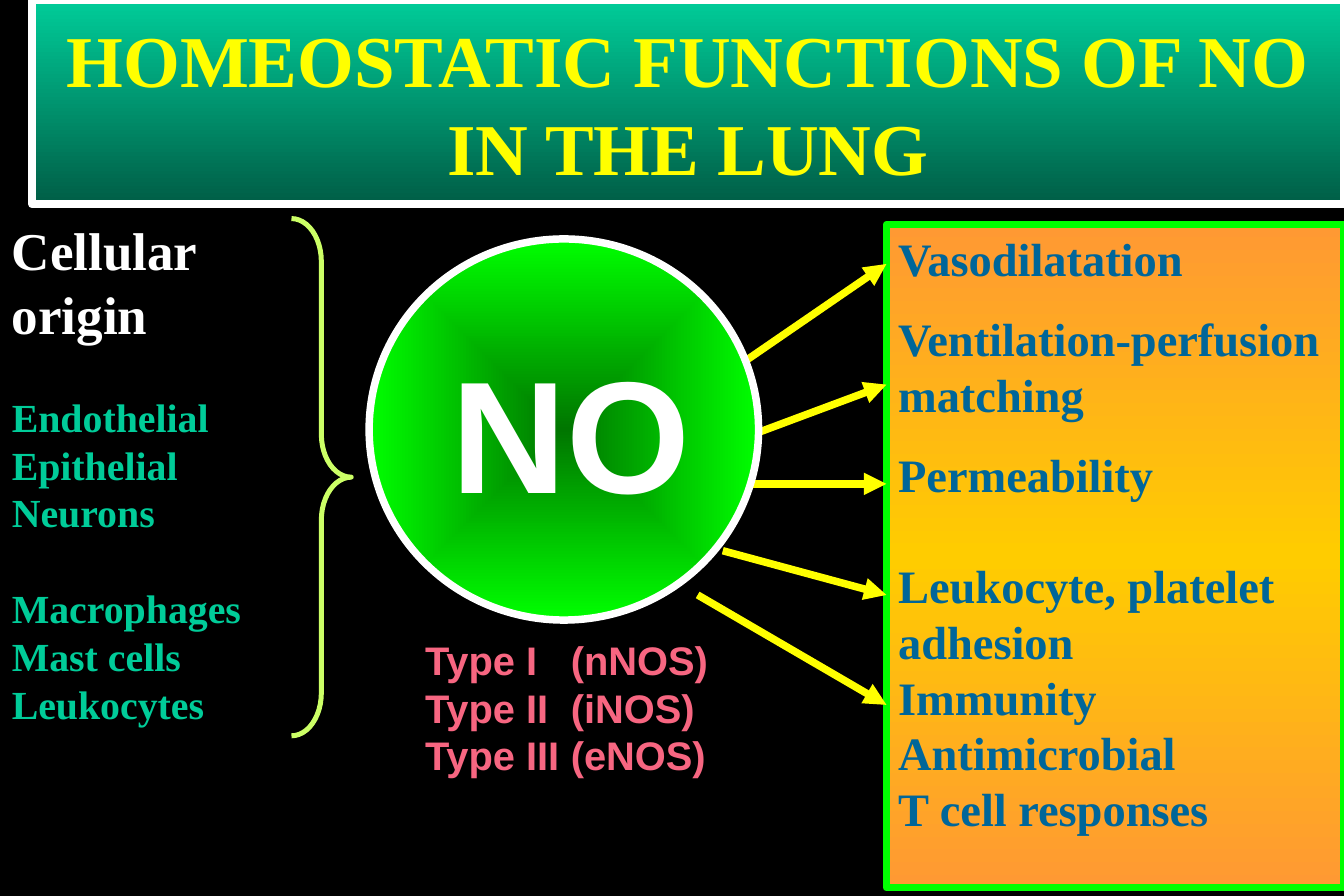
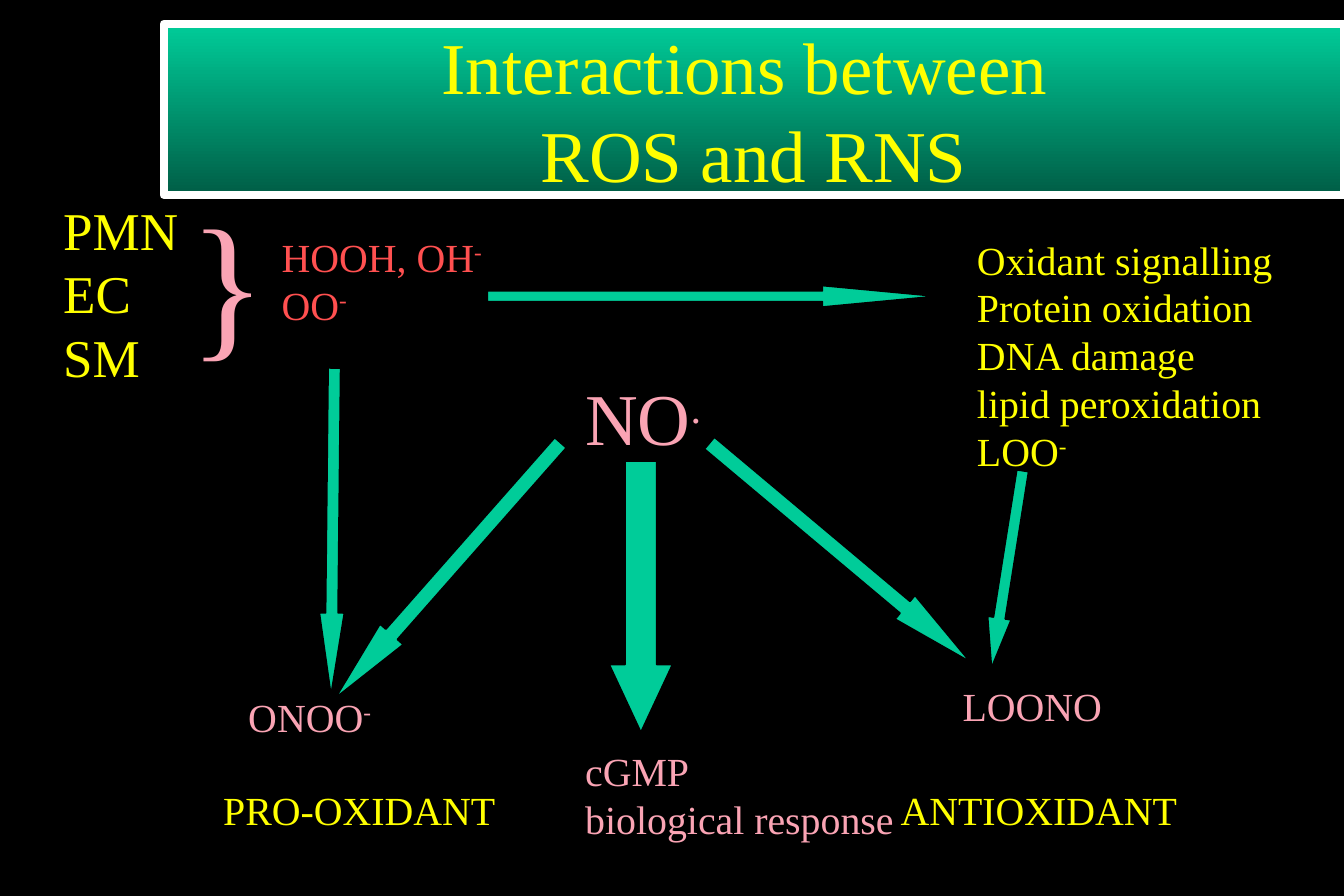
from lxml.etree import SubElement
from pptx import Presentation
from pptx.dml.color import RGBColor
from pptx.enum.shapes import MSO_CONNECTOR, MSO_SHAPE
from pptx.enum.text import MSO_ANCHOR, MSO_AUTO_SIZE, PP_ALIGN
from pptx.oxml.ns import qn
from pptx.util import Inches, Pt

BLACK = RGBColor(0x00, 0x00, 0x00)
WHITE = RGBColor(0xFF, 0xFF, 0xFF)
YELLOW = RGBColor(0xFF, 0xFF, 0x00)
TEAL = RGBColor(0x00, 0xCC, 0x99)
DARK_TEAL = RGBColor(0x00, 0x5E, 0x46)
GREEN = RGBColor(0x00, 0xFF, 0x00)
DARK_GREEN = RGBColor(0x00, 0x76, 0x00)
LIME = RGBColor(0xCC, 0xFF, 0x66)
ORANGE = RGBColor(0xFF, 0x99, 0x33)
AMBER = RGBColor(0xFF, 0xCC, 0x00)
BLUE = RGBColor(0x00, 0x66, 0x99)
ROSE = RGBColor(0xF7, 0x66, 0x81)
PINK = RGBColor(0xFA, 0xA4, 0xB4)
RED = RGBColor(0xFF, 0x50, 0x50)
SERIF, SANS = "Times New Roman", "Arial"
LINE_HEIGHT = 1.2

# Slide 1 content: (text, size of the gap above in points of type)
ORIGIN_HEADING = "Cellular origin"
CELLS = [("Endothelial", 24), ("Epithelial", 0), ("Neurons", 0),
         ("Macrophages", 24), ("Mast cells", 0), ("Leukocytes", 0)]
EFFECTS = [("Vasodilatation", 0), ("Ventilation-perfusion", 12),
           ("matching", 0), ("Permeability", 12),
           ("Leukocyte, platelet", 28), ("adhesion", 0), ("Immunity", 0),
           ("Antimicrobial", 0), ("T cell responses", 0)]
SYNTHASES = ["Type I\t(nNOS)", "Type II\t(iNOS)", "Type III\t(eNOS)"]
EFFECTS_LEFT = 7.42
# Start x, start y, end y; all end at the effects panel
EFFECT_ARROWS = [(5.95, 3.22, 2.21), (6.16, 3.69, 3.22), (6.16, 4.05, 4.05),
                 (6.05, 4.61, 4.98), (5.84, 4.98, 5.9)]

# Slide 2 content: lines, left, top, width, size, colour; ^ starts a superscript
REACTION_TEXTS = [
    (["NO^."], 4.8, 3.07, 1.5, 44, PINK),
    (["cGMP", "biological response"], 4.8, 6.2, 2.9, 24, PINK),
    (["HOOH, OH^-", "OO^-"], 2.26, 1.9, 2.0, 24, RED),
    (["Oxidant signalling", "Protein oxidation", "DNA damage",
      "lipid peroxidation", "LOO^-"], 8.08, 1.92, 2.8, 24, YELLOW),
    (["LOONO"], 7.96, 5.66, 1.5, 24, PINK),
    (["ONOO^-"], 1.98, 5.75, 1.4, 24, PINK),
    (["PRO-OXIDANT"], 1.77, 6.53, 2.6, 24, YELLOW),
    (["ANTIOXIDANT"], 7.44, 6.53, 2.6, 24, YELLOW),
    (["PMN", "EC", "SM"], 0.43, 1.6, 1.25, 32, YELLOW),
    (["}"], 1.49, 1.47, 0.75, 96, PINK),
]
# Preset, left, top, width, height, head length ratio, rotation
RIGHT, DOWN = MSO_SHAPE.RIGHT_ARROW, MSO_SHAPE.DOWN_ARROW
REACTION_ARROWS = [
    (RIGHT, 4.08, 2.39, 3.76, 0.18, 5.31, 0),
    (DOWN, 6.9, 3.2, 0.26, 2.85, 2.74, 310),
    (DOWN, 8.33, 3.93, 0.2, 1.67, 2.11, 9),
    (DOWN, 5.1, 3.86, 0.53, 2.27, 1.07, 0),
    (DOWN, 3.62, 3.35, 0.26, 2.85, 2.74, 41.4),
    (DOWN, 2.68, 3.08, 0.21, 2.74, 3.29, 0.6),
]


def set_gradient(shape, colours, centred=False):
    """Evenly spaced stops, running down or outward from the centre."""
    shape.fill.gradient()
    gradient = shape.fill._xPr.find(qn("a:gradFill"))
    for child in list(gradient):
        gradient.remove(child)
    stops = SubElement(gradient, qn("a:gsLst"))
    for i, colour in enumerate(colours):
        position = 100000 * i // (len(colours) - 1)
        stop = SubElement(stops, qn("a:gs"), pos=str(position))
        SubElement(stop, qn("a:srgbClr"), val=str(colour))
    if centred:
        route = SubElement(gradient, qn("a:path"), path="shape")
        SubElement(route, qn("a:fillToRect"),
                   l="50000", t="50000", r="50000", b="50000")
    else:
        SubElement(gradient, qn("a:lin"), ang="5400000", scaled="1")


def set_line(item, colour, width):
    item.line.color.rgb = colour
    item.line.width = Pt(width)


def set_font(paragraph, size, colour, name=SERIF, bold=False):
    font = paragraph.font
    font.name, font.size, font.bold = name, Pt(size), bold
    font.color.rgb = colour


def add_line(frame, text, size, colour, name=SERIF, bold=False, gap=0):
    """Fill the empty first paragraph, or append a new one."""
    first = frame.paragraphs[0]
    paragraph = frame.add_paragraph() if first.runs else first
    paragraph.alignment = PP_ALIGN.LEFT
    if gap:
        paragraph.space_before = Pt(gap * LINE_HEIGHT)
    base, _, superscript = text.partition("^")
    paragraph.add_run().text = base
    if superscript:
        raised = paragraph.add_run()
        raised.text = superscript
        raised._r.get_or_add_rPr().set("baseline", "30000")
    set_font(paragraph, size, colour, name, bold)
    return paragraph


def add_text_frame(slide, left, top, width, height):
    frame = slide.shapes.add_textbox(
        Inches(left), Inches(top), Inches(width), Inches(height)).text_frame
    frame.word_wrap = True
    return frame


def add_preset(slide, preset, left, top, width, height):
    shape = slide.shapes.add_shape(
        preset, Inches(left), Inches(top), Inches(width), Inches(height))
    shape.shadow.inherit = False
    return shape


def add_titled_slide(prs, text, left, top, width, height, bold):
    slide = prs.slides.add_slide(prs.slide_layouts[5])
    title = slide.shapes.title
    title.left, title.top = Inches(left), Inches(top)
    title.width, title.height = Inches(width), Inches(height)
    set_gradient(title, [TEAL, DARK_TEAL])
    set_line(title, WHITE, 5)
    frame = title.text_frame
    frame.text = text
    frame.word_wrap = True
    frame.auto_size = MSO_AUTO_SIZE.NONE
    frame.vertical_anchor = MSO_ANCHOR.MIDDLE
    frame.paragraphs[0].alignment = PP_ALIGN.CENTER
    set_font(frame.paragraphs[0], 44, YELLOW, bold=bold)
    return slide


def build_functions_slide(prs):
    slide = add_titled_slide(prs, "HOMEOSTATIC FUNCTIONS OF NO IN THE LUNG",
                             0.27, 0, 10.98, 1.71, bold=True)

    # Cellular origin and its brace
    origin = add_text_frame(slide, 0, 1.77, 2.41, 4.5)
    add_line(origin, ORIGIN_HEADING, 32, WHITE, bold=True)
    for cell, gap in CELLS:
        add_line(origin, cell, 24, TEAL, bold=True, gap=gap)
    brace = add_preset(slide, MSO_SHAPE.RIGHT_BRACE, 2.44, 1.83, 0.5, 4.33)
    brace.adjustments[0] = 0.72
    brace.fill.background()
    set_line(brace, LIME, 3)

    # Effects panel
    effects = add_preset(slide, MSO_SHAPE.RECTANGLE,
                         EFFECTS_LEFT, 1.88, 3.83, 5.55)
    set_gradient(effects, [ORANGE, AMBER, ORANGE])
    set_line(effects, GREEN, 4.5)
    effects.text_frame.word_wrap = True
    effects.text_frame.vertical_anchor = MSO_ANCHOR.TOP
    for effect, gap in EFFECTS:
        add_line(effects.text_frame, effect, 28, BLUE, bold=True, gap=gap)

    # Arrows to the effects
    for start_x, start_y, end_y in EFFECT_ARROWS:
        arrow = slide.shapes.add_connector(
            MSO_CONNECTOR.STRAIGHT, Inches(start_x), Inches(start_y),
            Inches(EFFECTS_LEFT), Inches(end_y))
        set_line(arrow, YELLOW, 4.5)
        SubElement(arrow.line._get_or_add_ln(), qn("a:tailEnd"),
                   type="triangle")
        SubElement(arrow._element.spPr, qn("a:effectLst"))

    # NO circle; the wider left margin nudges the text right
    circle = add_preset(slide, MSO_SHAPE.OVAL, 3.09, 2, 3.26, 3.19)
    set_gradient(circle, [DARK_GREEN, GREEN], centred=True)
    set_line(circle, WHITE, 4.5)
    frame = circle.text_frame
    frame.word_wrap = False
    frame.margin_left = Inches(0.22)
    frame.vertical_anchor = MSO_ANCHOR.MIDDLE
    formula = add_line(frame, "NO", 96, WHITE, SANS, bold=True)
    formula.alignment = PP_ALIGN.CENTER

    # Synthase types, with the short names on a tab stop
    synthases = add_text_frame(slide, 3.46, 5.27, 2.92, 1.3)
    for synthase in SYNTHASES:
        line = add_line(synthases, synthase, 24, ROSE, SANS, bold=True)
        properties = line._p.get_or_add_pPr()
        tabs = SubElement(properties, qn("a:tabLst"))
        SubElement(tabs, qn("a:tab"), pos=str(Inches(1.22)), algn="l")
        properties.find(qn("a:defRPr")).addprevious(tabs)


def build_interactions_slide(prs):
    slide = add_titled_slide(prs, "Interactions between \vROS and RNS",
                             1.37, 0.2, 9.88, 1.43, bold=False)

    # Reaction arrows
    for preset, left, top, width, height, head, turn in REACTION_ARROWS:
        arrow = add_preset(slide, preset, left, top, width, height)
        arrow.adjustments[0] = 0.5
        arrow.adjustments[1] = head
        arrow.rotation = turn
        arrow.fill.solid()
        arrow.fill.fore_color.rgb = TEAL
        set_line(arrow, BLACK, 1)

    # Species and outcomes
    for lines, left, top, width, size, colour in REACTION_TEXTS:
        height = 0.1 + len(lines) * size * LINE_HEIGHT / 72
        frame = add_text_frame(slide, left, top, width, height)
        for line in lines:
            add_line(frame, line, size, colour)


def main():
    prs = Presentation()
    prs.slide_width, prs.slide_height = Inches(11.25), Inches(7.5)
    backdrop = prs.slide_master.background.fill
    backdrop.solid()
    backdrop.fore_color.rgb = BLACK
    build_functions_slide(prs)
    build_interactions_slide(prs)
    prs.save("out.pptx")


if __name__ == "__main__":
    main()
